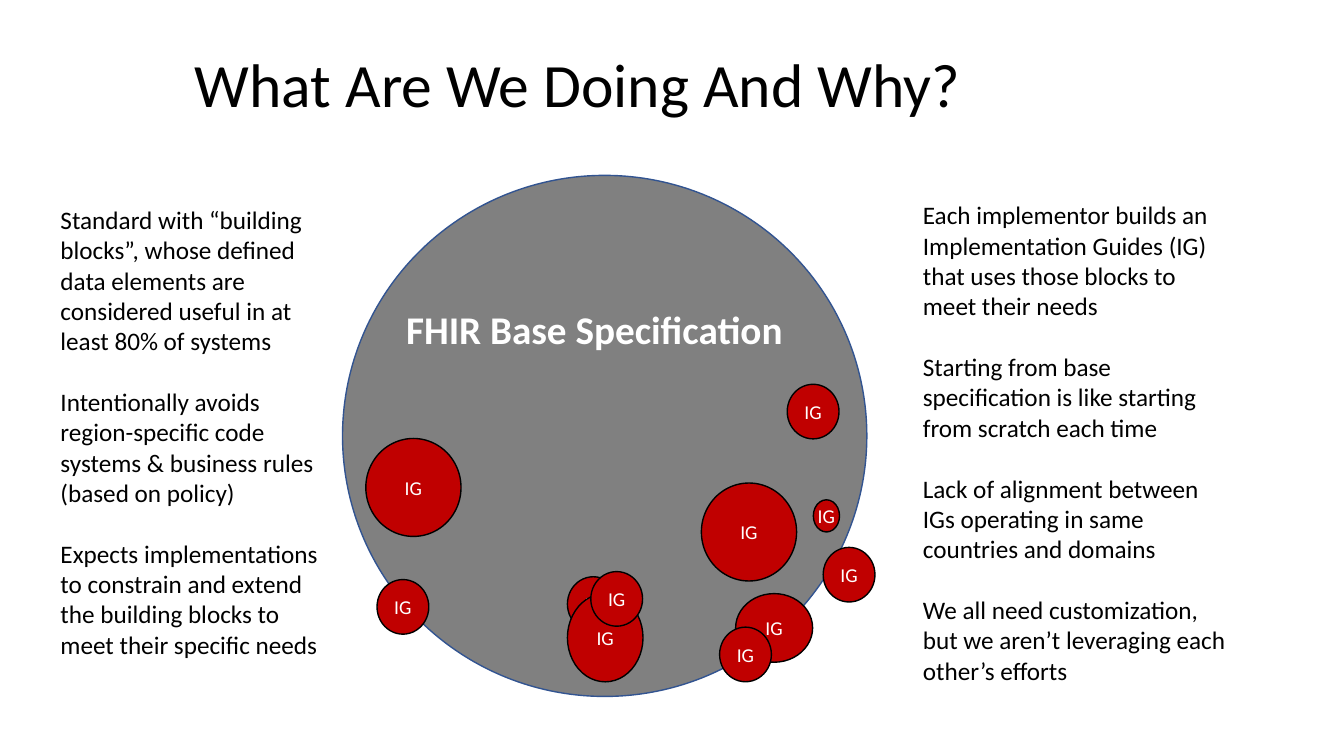
from dataclasses import dataclass

from lxml import etree
from pptx import Presentation
from pptx.dml.color import RGBColor
from pptx.enum.shapes import MSO_SHAPE
from pptx.enum.text import MSO_ANCHOR, MSO_AUTO_SIZE, PP_ALIGN
from pptx.oxml.ns import qn
from pptx.util import Pt

CIRCLE = MSO_SHAPE.FLOWCHART_CONNECTOR
LEFT, CENTER = PP_ALIGN.LEFT, PP_ALIGN.CENTER
TOP, MIDDLE = MSO_ANCHOR.TOP, MSO_ANCHOR.MIDDLE
NO_AUTOFIT = MSO_AUTO_SIZE.NONE
TWO_CONTENT = 3


@dataclass(frozen=True)
class Theme:
    font: str = "Calibri"
    text: str = "000000"
    light: str = "FFFFFF"
    base_fill: str = "808080"
    base_line: str = "325491"
    guide_fill: str = "C00000"
    guide_line: str = "000000"
    title_size: float = 44
    heading_size: float = 28
    body_size: float = 18
    guide_size: float = 14
    paragraph_gap: float = 22


def write(paragraph, text, *, font, size, color, bold=False, align=LEFT,
          line_spacing=1.0, space_before=0):
    paragraph.alignment = align
    paragraph.line_spacing = line_spacing
    paragraph.space_before = Pt(space_before)
    paragraph.space_after = Pt(0)
    run = paragraph.add_run()
    run.text = text
    run.font.name = font
    run.font.size = Pt(size)
    run.font.bold = bold
    run.font.color.rgb = RGBColor.from_string(color)


def place(shape, box):
    shape.left, shape.top, shape.width, shape.height = map(Pt, box)


class SlideBuilder:
    def __init__(self, slide, theme):
        self.slide = slide
        self.theme = theme

    def frame(self, shape, anchor):
        text_frame = shape.text_frame
        text_frame.word_wrap = True
        text_frame.auto_size = NO_AUTOFIT
        text_frame.vertical_anchor = anchor
        return text_frame

    def title(self, text, box):
        shape = self.slide.shapes.title
        place(shape, box)
        write(self.frame(shape, MIDDLE).paragraphs[0], text, font=self.theme.font,
              size=self.theme.title_size, color=self.theme.text, line_spacing=0.9)

    def column(self, index, statements, box):
        shape = self.slide.placeholders[index]
        place(shape, box)
        text_frame = self.frame(shape, TOP)
        for number, statement in enumerate(statements):
            paragraph = text_frame.add_paragraph() if number else text_frame.paragraphs[0]
            write(paragraph, statement, font=self.theme.font, size=self.theme.body_size,
                  color=self.theme.text,
                  space_before=self.theme.paragraph_gap if number else 0)
            properties = paragraph._p.get_or_add_pPr()
            properties.set("marL", "0")
            properties.set("indent", "0")
            etree.SubElement(properties, qn("a:buNone"))

    def heading(self, text, box):
        shape = self.slide.shapes.add_textbox(*map(Pt, box))
        write(self.frame(shape, TOP).paragraphs[0], text, font=self.theme.font,
              size=self.theme.heading_size, color=self.theme.light, bold=True)

    def circle(self, box, fill, line):
        shape = self.slide.shapes.add_shape(CIRCLE, *map(Pt, box))
        shape.shadow.inherit = False
        shape.fill.solid()
        shape.fill.fore_color.rgb = RGBColor.from_string(fill)
        shape.line.color.rgb = RGBColor.from_string(line)
        shape.line.width = Pt(1)
        return shape

    def guide(self, box):
        shape = self.circle(box, self.theme.guide_fill, self.theme.guide_line)
        text_frame = self.frame(shape, MIDDLE)
        text_frame.margin_left = text_frame.margin_right = 0
        text_frame.margin_top = text_frame.margin_bottom = 0
        write(text_frame.paragraphs[0], "IG", font=self.theme.font,
              size=self.theme.guide_size, color=self.theme.light, align=CENTER)


BASE_STATEMENTS = (
    "Standard with “building blocks”, whose defined data elements are considered useful in at least 80% of systems",
    "Intentionally avoids region-specific code systems & business rules (based on policy)",
    "Expects implementations to constrain and extend the building blocks to meet their specific needs",
)
GUIDE_STATEMENTS = (
    "Each implementor builds an Implementation Guides (IG) that uses those blocks to meet their needs",
    "Starting from base specification is like starting from scratch each time",
    "Lack of alignment between IGs operating in same countries and domains",
    "We all need customization, but we aren’t leveraging each other’s efforts",
)
LARGE = (68, 70)
SMALL = (37, 39)
GUIDES = (
    ((501, 345), LARGE),
    ((525.5, 424), (55, 49)),
    ((581, 357), (18.7, 23)),
    ((588, 391), SMALL),
    ((405.3, 412), SMALL),
    ((405.3, 424), (54, 63)),
    ((422, 408.3), SMALL),
    ((514, 448), SMALL),
    ((562.3, 274.5), SMALL),
    ((261.3, 313.2), LARGE),
    ((269.3, 414), SMALL),
)


def main():
    presentation = Presentation()
    presentation.slide_width, presentation.slide_height = Pt(960), Pt(540)
    theme = Theme()
    slide = presentation.slides.add_slide(presentation.slide_layouts[TWO_CONTENT])
    builder = SlideBuilder(slide, theme)
    builder.title("What Are We Doing And Why?", (132, 10, 828, 104.5))
    builder.column(1, BASE_STATEMENTS, (36, 142.5, 201.5, 334))
    builder.column(2, GUIDE_STATEMENTS, (652, 139, 235, 356.5))
    builder.circle((244.7, 125.3, 374.5, 372.2), theme.base_fill, theme.base_line)
    builder.heading("FHIR Base Specification", (283, 214.5, 316, 41))
    for position, size in GUIDES:
        builder.guide(position + size)
    presentation.save("out.pptx")


if __name__ == "__main__":
    main()
